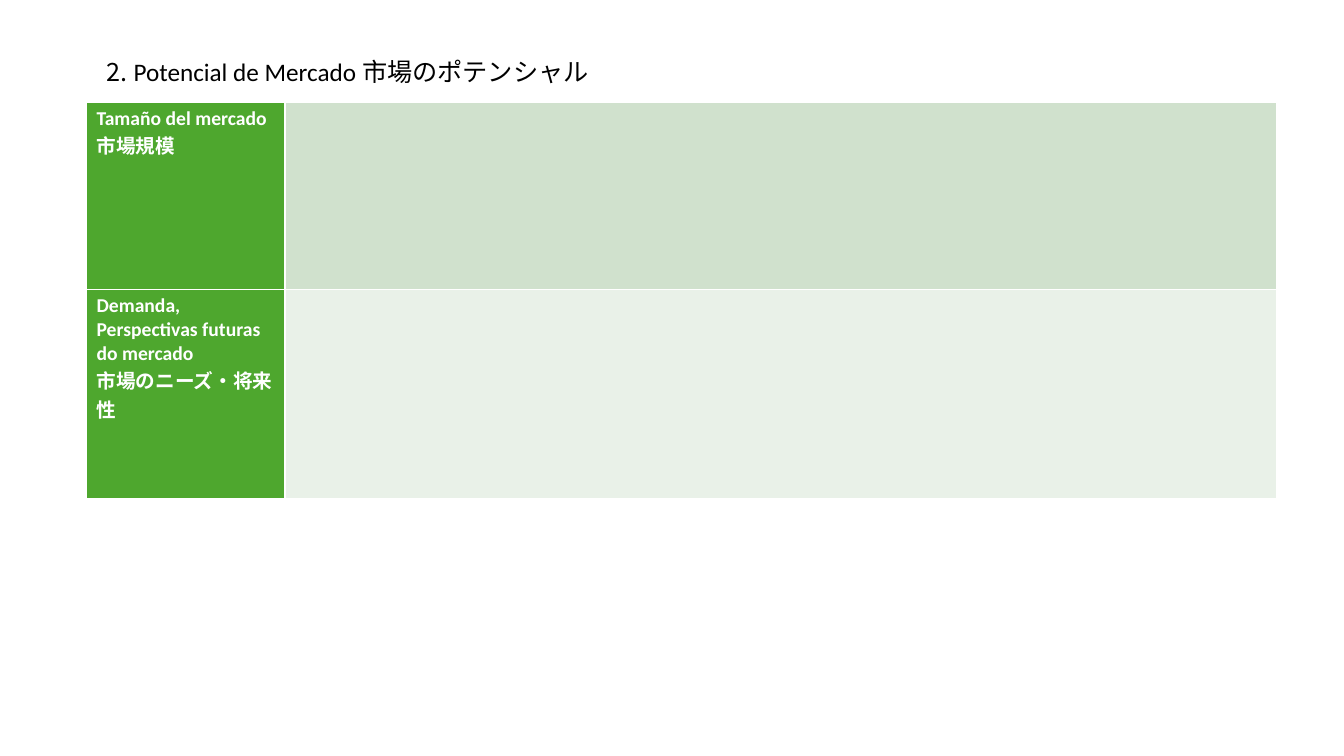
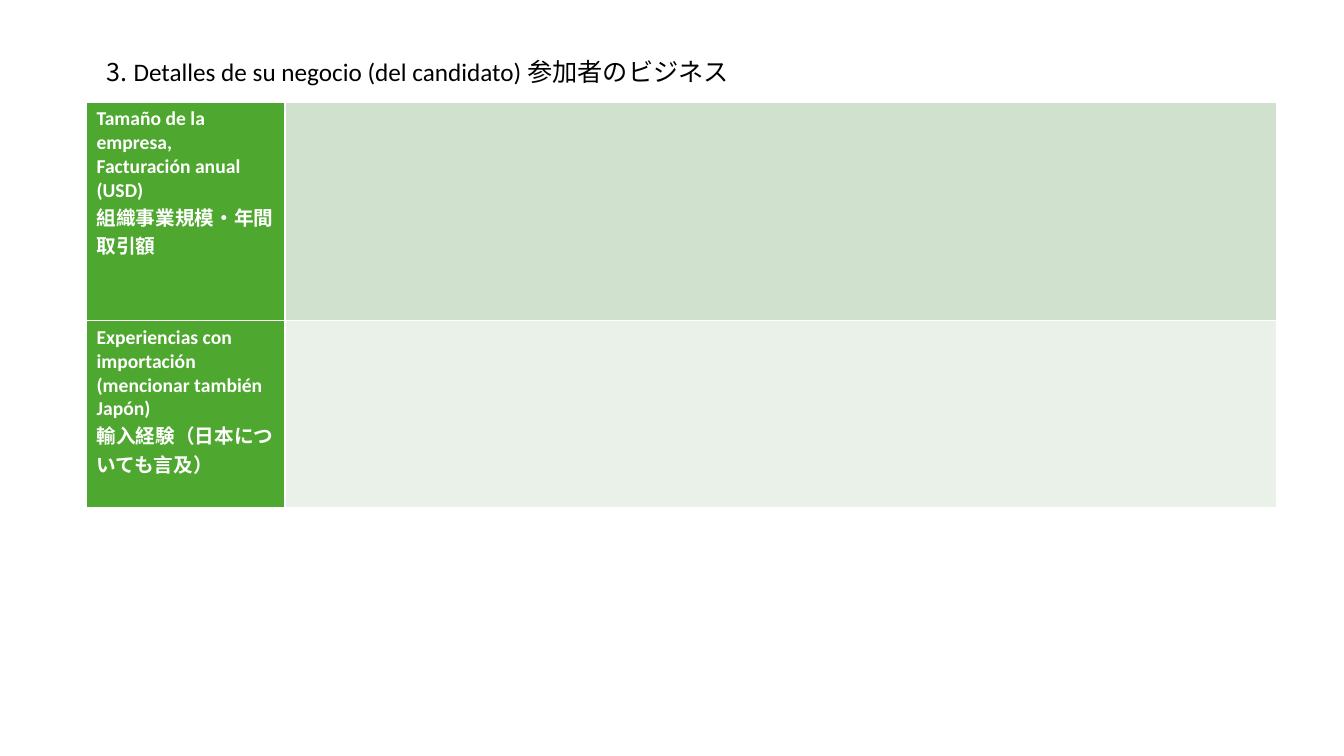
from dataclasses import dataclass

from lxml.etree import SubElement
from pptx import Presentation
from pptx.dml.color import RGBColor
from pptx.enum.text import MSO_ANCHOR, MSO_AUTO_SIZE, PP_ALIGN
from pptx.oxml import parse_xml
from pptx.oxml.ns import nsdecls, qn
from pptx.util import Cm, Pt


@dataclass(frozen=True)
class Theme:
    latin: str = "Calibri"
    asian: str = "Noto Sans CJK JP"
    head: Pt = Pt(18)
    body: Pt = Pt(14)
    black: RGBColor = RGBColor(0, 0, 0)
    white: RGBColor = RGBColor(255, 255, 255)
    green: RGBColor = RGBColor.from_string("4EA72E")
    bands: tuple = (RGBColor.from_string("D0E1CD"), RGBColor.from_string("E9F1E8"))


theme = Theme()
ES, JA = theme.latin, theme.asian


def write(para, parts, size, color, bold):
    para.font.size, para.font.bold = size, bold
    para.font.color.rgb = color
    for text, face in parts:
        run = para.add_run()
        run.text = text
        run.font.name = face
        SubElement(run._r.get_or_add_rPr(), qn("a:ea"), typeface=face)


def paint(cell, color):
    props = cell._tc.get_or_add_tcPr()
    for side in ("lnL", "lnR", "lnT", "lnB"):
        props.append(parse_xml(
            f'<a:{side} {nsdecls("a")} w="{Pt(1)}"><a:solidFill>'
            f'<a:srgbClr val="{theme.white}"/></a:solidFill></a:{side}>'))
    cell.fill.solid()
    cell.fill.fore_color.rgb = color


pages = [
    (
        [("2.", JA), (" Potencial de Mercado ", ES), ("市場のポテンシャル", JA)],
        [
            (4.72, [[("Tamaño del mercado ", ES), ("市場規模", JA)]]),
            (5.28, [[("Demanda, Perspectivas futuras do mercado", ES)],
                    [("市場のニーズ・将来性", JA)]]),
        ],
    ),
    (
        [("3.", JA), (" Detalles de su negocio (del candidato) ", ES),
         ("参加者のビジネス", JA)],
        [
            (5.51, [[("Tamaño de la empresa,", ES)],
                    [("Facturación anual (USD)", ES)],
                    [("組織事業規模・年間取引額", JA)]]),
            (4.7, [[("Experiencias con importación (mencionar también Japón)", ES)],
                   [("輸入経験（日本についても言及）", JA)]]),
        ],
    ),
]

deck = Presentation()
deck.slide_width, deck.slide_height = Cm(33.87), Cm(19.05)

for heading, rows in pages:
    slide = deck.slides.add_slide(deck.slide_layouts[5])
    title = slide.shapes.title
    title.left, title.top, title.width, title.height = Cm(2.44), Cm(1.3), Cm(16.94), Cm(1.02)
    frame = title.text_frame
    frame.vertical_anchor = MSO_ANCHOR.TOP
    frame.auto_size = MSO_AUTO_SIZE.SHAPE_TO_FIT_TEXT
    frame.paragraphs[0].alignment = PP_ALIGN.LEFT
    write(frame.paragraphs[0], heading, theme.head, theme.black, False)

    total = sum(height for height, _ in rows)
    table = slide.shapes.add_table(len(rows), 2, Cm(2.18), Cm(2.57), Cm(30), Cm(total)).table
    table.first_row = table.horz_banding = False
    table.columns[0].width, table.columns[1].width = Cm(5), Cm(25)
    for row, (height, paras), band in zip(table.rows, rows, theme.bands):
        row.height = Cm(height)
        label, blank = row.cells
        paint(label, theme.green)
        paint(blank, band)
        for i, parts in enumerate(paras):
            text = label.text_frame
            para = text.add_paragraph() if i else text.paragraphs[0]
            write(para, parts, theme.body, theme.white, True)

deck.save("out.pptx")
